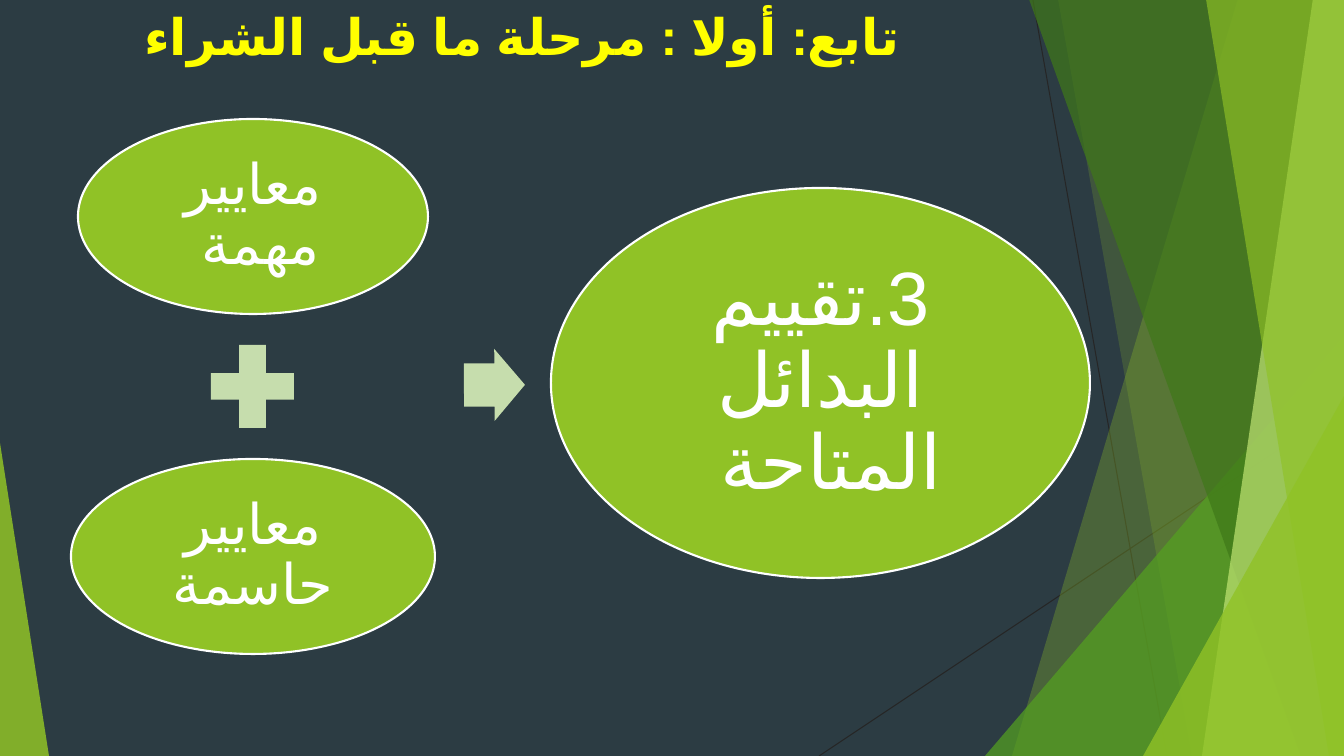
from dataclasses import dataclass

from lxml.etree import SubElement
from pptx import Presentation
from pptx.dml.color import RGBColor
from pptx.enum.lang import MSO_LANGUAGE_ID
from pptx.enum.shapes import MSO_CONNECTOR, MSO_SHAPE
from pptx.enum.text import MSO_ANCHOR, MSO_AUTO_SIZE, PP_ALIGN
from pptx.oxml.ns import qn
from pptx.util import Pt

PX = 12192000 / 1344
WIDTH, HEIGHT = 1344, 756


@dataclass(frozen=True)
class Theme:
    font: str = "Arial"
    back: str = "2C3C43"
    title: str = "FFFF00"
    text: str = "FFFFFF"
    rule: str = "262626"
    lime: str = "90C226"
    pale: str = "C0E474"
    leaf: str = "54A021"
    dark: str = "3F7819"
    sign: str = "C6DDAD"
    head: int = 36
    small: int = 40
    large: int = 54


THEME = Theme()

RULES = [(1033, 0, 1167, 756), (1344, 406, 819, 756)]
# Each band reaches the right edge: top x, bottom x, colour, opacity in percent.
BACK_BANDS = [(1238, 1012, THEME.lime, 30), (1058, 1192, THEME.lime, 20)]
FRONT_BANDS = [(1029, 1301, THEME.dark, 70), (1313, 1202, THEME.pale, 70),
               (1206, 1329, THEME.lime, 65)]
OVALS = [
    ((78, 119, 350, 195), "معايير مهمة ", THEME.small, 6),
    ((71, 459, 364, 195), "معايير حاسمة", THEME.small, 6),
    ((551, 188, 539, 390), "3.تقييم البدائل المتاحة ", THEME.large, 7),
]


def emu(*values):
    return [round(value * PX) for value in values]


def rgb(code):
    return RGBColor.from_string(code)


def paint(shape, color, alpha=100):
    """Give a flat fill without outline or shadow; alpha is in percent."""
    shape.shadow.inherit = False
    shape.fill.solid()
    shape.fill.fore_color.rgb = rgb(color)
    shape.line.fill.background()
    if alpha < 100:
        tint = shape.fill._xPr.find(".//" + qn("a:srgbClr"))
        SubElement(tint, qn("a:alpha"), val=str(alpha * 1000))


def add_rule(slide, ends):
    line = slide.shapes.add_connector(MSO_CONNECTOR.STRAIGHT, *emu(*ends))
    line.line.color.rgb = rgb(THEME.rule)
    line.line.width = Pt(0.75)
    SubElement(line._element.spPr, qn("a:effectLst"))


def add_band(slide, top, base, color, alpha):
    outline = slide.shapes.build_freeform(top, -1, scale=PX)
    outline.add_line_segments([(WIDTH, -1), (WIDTH, HEIGHT), (base, HEIGHT)])
    paint(outline.convert_to_shape(), color, alpha)


def add_form(slide, kind, box, color, alpha=100, adjust=()):
    shape = slide.shapes.add_shape(kind, *emu(*box))
    for index, value in enumerate(adjust):
        shape.adjustments[index] = value
    paint(shape, color, alpha)
    return shape


def write(frame, text, **style):
    """Write one centred right-to-left paragraph in the theme font."""
    frame.word_wrap = True
    frame.auto_size = MSO_AUTO_SIZE.NONE
    para = frame.paragraphs[0]
    para.alignment = PP_ALIGN.CENTER
    para._p.get_or_add_pPr().set("rtl", "1")
    run = para.add_run()
    run.text = text
    color = style.pop("color")
    run.font.color.rgb = rgb(color)
    base = {"name": THEME.font, "language_id": MSO_LANGUAGE_ID.ARABIC}
    for name, value in {**base, **style}.items():
        setattr(run.font, name, value)
    SubElement(run._r.get_or_add_rPr(), qn("a:cs"), typeface=THEME.font)
    return para


def add_oval(slide, box, text, size, inset):
    oval = add_form(slide, MSO_SHAPE.OVAL, box, THEME.lime)
    oval.line.color.rgb = rgb(THEME.text)
    oval.line.width = Pt(1.5)
    frame = oval.text_frame
    frame.vertical_anchor = MSO_ANCHOR.MIDDLE
    for side in ("left", "top", "right", "bottom"):
        setattr(frame, f"margin_{side}", emu(inset)[0])
    para = write(frame, text, color=THEME.text, size=Pt(size))
    para.line_spacing = 0.9


def set_title(slide, text):
    title = slide.shapes.title
    title.left, title.top, title.width, title.height = emu(48, 0, 948, 145)
    title.text_frame.vertical_anchor = MSO_ANCHOR.TOP
    write(title.text_frame, text, color=THEME.title, size=Pt(THEME.head), bold=True)


def add_decor(slide):
    peak = MSO_SHAPE.ISOSCELES_TRIANGLE
    for ends in RULES:
        add_rule(slide, ends)
    for band in BACK_BANDS:
        add_band(slide, *band)
    add_form(slide, peak, (985, 336, 359, 420), THEME.leaf, 72, [1])
    for band in FRONT_BANDS:
        add_band(slide, *band)
    add_form(slide, peak, (1143, 396, 201, 360), THEME.lime, 80, [1])
    add_form(slide, peak, (0, 443, 49, 313), THEME.lime, 85, [0])


def main():
    deck = Presentation()
    deck.slide_width, deck.slide_height = emu(WIDTH, HEIGHT)
    slide = deck.slides.add_slide(deck.slide_layouts[5])
    slide.background.fill.solid()
    slide.background.fill.fore_color.rgb = rgb(THEME.back)
    add_decor(slide)
    set_title(slide, "تابع: أولا : مرحلة ما قبل الشراء")
    for oval in OVALS:
        add_oval(slide, *oval)
    add_form(slide, MSO_SHAPE.MATH_PLUS, (196, 330, 113, 113), THEME.sign)
    arrow = add_form(slide, MSO_SHAPE.RIGHT_ARROW, (464, 349, 61, 72),
                     THEME.sign, adjust=[0.6, 0.5])
    arrow.rotation = 359.7
    deck.save("out.pptx")


if __name__ == "__main__":
    main()
